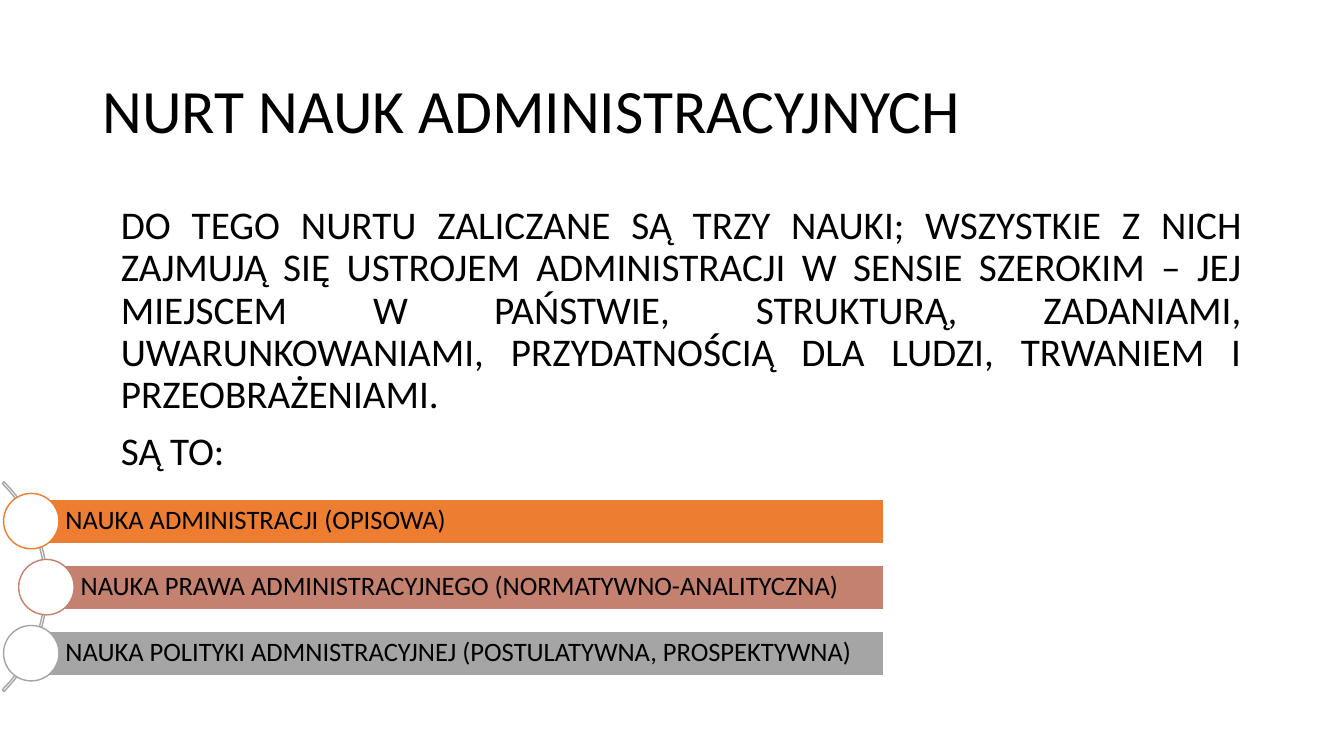
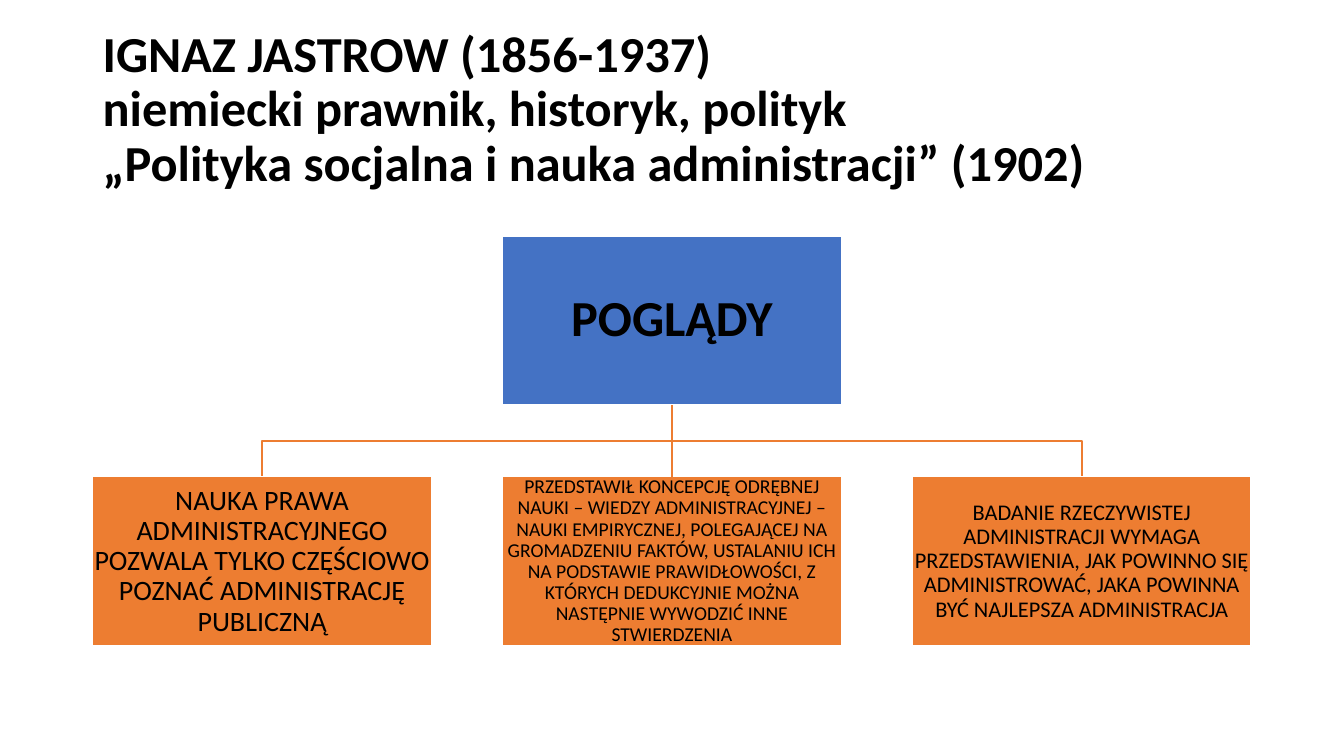
from dataclasses import dataclass

from pptx import Presentation
from pptx.dml.color import RGBColor
from pptx.enum.shapes import MSO_CONNECTOR as Connector, MSO_SHAPE as Shape
from pptx.enum.text import MSO_ANCHOR as Anchor, PP_ALIGN as Align
from pptx.oxml.ns import qn
from pptx.util import Inches, Pt


@dataclass(frozen=True)
class Theme:
    font: str = "Calibri"
    ink: str = "000000"
    paper: str = "FFFFFF"
    orange: str = "ED7D31"
    clay: str = "C48170"
    grey: str = "A5A5A5"
    blue: str = "4472C4"
    title_size: int = 44
    heading_size: int = 36
    body_size: int = 28
    bar_size: int = 19
    line_width: int = 1
    line_spacing: float = 0.9


THEME = Theme()
SLIDE_W, SLIDE_H = 13.33, 7.5

# Content grid: three equal columns between the margins
MARGIN, CONTENT_W = 0.92, 11.49
COLUMN_W = 3.36
COLUMN_STEP = (CONTENT_W - COLUMN_W) / 2

INTRO = [
    "DO TEGO NURTU ZALICZANE SĄ TRZY NAUKI; WSZYSTKIE Z NICH ZAJMUJĄ SIĘ "
    "USTROJEM ADMINISTRACJI W SENSIE SZEROKIM – JEJ MIEJSCEM W PAŃSTWIE, "
    "STRUKTURĄ, ZADANIAMI, UWARUNKOWANIAMI, PRZYDATNOŚCIĄ DLA LUDZI, "
    "TRWANIEM I PRZEOBRAŻENIAMI.",
    "SĄ TO:",
]

# Label, colour, left edge of the bar
SCIENCES = [
    ("NAUKA ADMINISTRACJI (OPISOWA)", THEME.orange, 0.31),
    ("NAUKA PRAWA ADMINISTRACYJNEGO (NORMATYWNO-ANALITYCZNA)", THEME.clay, 0.46),
    ("NAUKA POLITYKI ADMNISTRACYJNEJ (POSTULATYWNA, PROSPEKTYWNA)", THEME.grey, 0.31),
]

# Text, type size
VIEWS = [
    ("NAUKA PRAWA ADMINISTRACYJNEGO POZWALA TYLKO CZĘŚCIOWO POZNAĆ "
     "ADMINISTRACJĘ PUBLICZNĄ", 20),
    ("PRZEDSTAWIŁ KONCEPCJĘ ODRĘBNEJ NAUKI – WIEDZY ADMINISTRACYJNEJ – NAUKI "
     "EMPIRYCZNEJ, POLEGAJĄCEJ NA GROMADZENIU FAKTÓW, USTALANIU ICH NA PODSTAWIE "
     "PRAWIDŁOWOŚCI, Z KTÓRYCH DEDUKCYJNIE MOŻNA NASTĘPNIE WYWODZIĆ INNE "
     "STWIERDZENIA", 14),
    ("BADANIE RZECZYWISTEJ ADMINISTRACJI WYMAGA PRZEDSTAWIENIA, JAK POWINNO SIĘ "
     "ADMINISTROWAĆ, JAKA POWINNA BYĆ NAJLEPSZA ADMINISTRACJA", 16),
]


def inches(*values):
    return [Inches(value) for value in values]


def write(box, paragraphs, size, bold=False, aligns=(Align.LEFT,),
          anchor=Anchor.MIDDLE, insets=(0.1, 0.05, 0.1, 0.05), space_before=0):
    """Fill a box with paragraphs; the last alignment serves all that follow."""
    frame = box.text_frame
    frame.word_wrap = True
    frame.vertical_anchor = anchor
    (frame.margin_left, frame.margin_top,
     frame.margin_right, frame.margin_bottom) = inches(*insets)
    for index, text in enumerate(paragraphs):
        para = frame.add_paragraph() if index else frame.paragraphs[0]
        para.text = text
        para.alignment = aligns[min(index, len(aligns) - 1)]
        para.line_spacing = THEME.line_spacing
        para.space_before = Pt(space_before)
        for span in para.runs:
            span.font.name = THEME.font
            span.font.size = Pt(size)
            span.font.bold = bold
            span.font.color.rgb = RGBColor.from_string(THEME.ink)


def add_text(page, place, paragraphs, size, **style):
    box = page.shapes.add_textbox(*inches(*place))
    write(box, paragraphs, size, **style)


def add_title(page, text, size, **style):
    add_text(page, (MARGIN, 0.4, CONTENT_W, 1.45), [text], size, **style)


def set_line(item, colour):
    item.line.color.rgb = RGBColor.from_string(colour)
    item.line.width = Pt(THEME.line_width)


def add_figure(page, kind, place, fill=None, line=THEME.paper):
    figure = page.shapes.add_shape(kind, *inches(*place))
    figure.shadow.inherit = False
    if fill:
        figure.fill.solid()
        figure.fill.fore_color.rgb = RGBColor.from_string(fill)
    else:
        figure.fill.background()
    set_line(figure, line)
    return figure


def add_branch(page, points):
    """Open bent line through the given points."""
    start, *rest = [tuple(inches(*point)) for point in points]
    builder = page.shapes.build_freeform(*start)
    builder.add_line_segments(rest, close=False)
    branch = builder.convert_to_shape()
    branch.shadow.inherit = False
    branch.fill.background()
    set_line(branch, THEME.orange)


def add_trunk(page, upper, lower):
    """Straight line from the bottom of one box to the top of another."""
    trunk = page.shapes.add_connector(Connector.STRAIGHT, 0, 0, 0, 0)
    set_line(trunk, THEME.orange)
    properties = trunk._element.spPr
    properties.append(properties.makeelement(qn("a:effectLst"), {}))
    trunk.begin_connect(upper, 2)
    trunk.end_connect(lower, 0)


def add_science_list(page):
    right, first_middle, step = 8.77, 5.17, 0.655
    bar_h, dot = 0.44, 0.55

    # Arc behind the dots
    arc = add_figure(page, Shape.BLOCK_ARC, (-2.47, 4.35, 2.94, 2.94), line=THEME.grey)
    for index, value in enumerate((189, 27, 0.008)):
        arc.adjustments[index] = value

    # Bars, each with a dot centred on its left edge
    for index, (label, colour, left) in enumerate(SCIENCES):
        middle = first_middle + index * step
        bar = add_figure(page, Shape.RECTANGLE,
                         (left, middle - bar_h / 2, right - left, bar_h), colour)
        write(bar, [label], THEME.bar_size, insets=(0.34, 0.05, 0.05, 0.05))
        add_figure(page, Shape.OVAL, (left - dot / 2, middle - dot / 2, dot, dot),
                   THEME.paper, colour)


def add_view_tree(page):
    root_top, child_top, box_h = 2.34, 4.73, 1.68
    root_bottom = root_top + box_h
    bus = (root_bottom + child_top) / 2
    left, middle, right = [MARGIN + COLUMN_W / 2 + column * COLUMN_STEP
                           for column in range(len(VIEWS))]

    def add_node(column, top, fill, text, size, inset, bold=False):
        node = add_figure(page, Shape.RECTANGLE,
                          (MARGIN + column * COLUMN_STEP, top, COLUMN_W, box_h), fill)
        write(node, [text], size, bold=bold, aligns=(Align.CENTER,), insets=(inset,) * 4)
        return node

    # Branches to the outer children
    for centre in (right, left):
        add_branch(page, [(middle, root_bottom), (middle, bus),
                          (centre, bus), (centre, child_top)])

    # Root, children and the trunk between the middle boxes
    root = add_node(1, root_top, THEME.blue, "POGLĄDY", THEME.heading_size, 0.03, bold=True)
    children = [add_node(column, child_top, THEME.orange, text, size, 0.01)
                for column, (text, size) in enumerate(VIEWS)]
    add_trunk(page, root, children[1])


def main():
    deck = Presentation()
    deck.slide_width, deck.slide_height = inches(SLIDE_W, SLIDE_H)
    blank = deck.slide_layouts[6]

    # Slide 1: the three sciences
    page = deck.slides.add_slide(blank)
    add_title(page, "NURT NAUK ADMINISTRACYJNYCH", THEME.title_size)
    add_text(page, (1.1, 1.99, 11.31, 3.17), INTRO, THEME.body_size, anchor=Anchor.TOP,
             aligns=(Align.JUSTIFY, Align.LEFT), space_before=10)
    add_science_list(page)

    # Slide 2: the views of one scholar
    page = deck.slides.add_slide(blank)
    add_title(page, "IGNAZ JASTROW (1856-1937)\vniemiecki prawnik, historyk, polityk\v"
                    "„Polityka socjalna i nauka administracji” (1902)",
              THEME.heading_size, bold=True, insets=(0.1, 0.05, 0.1, 0.11))
    add_view_tree(page)

    deck.save("out.pptx")


if __name__ == "__main__":
    main()
